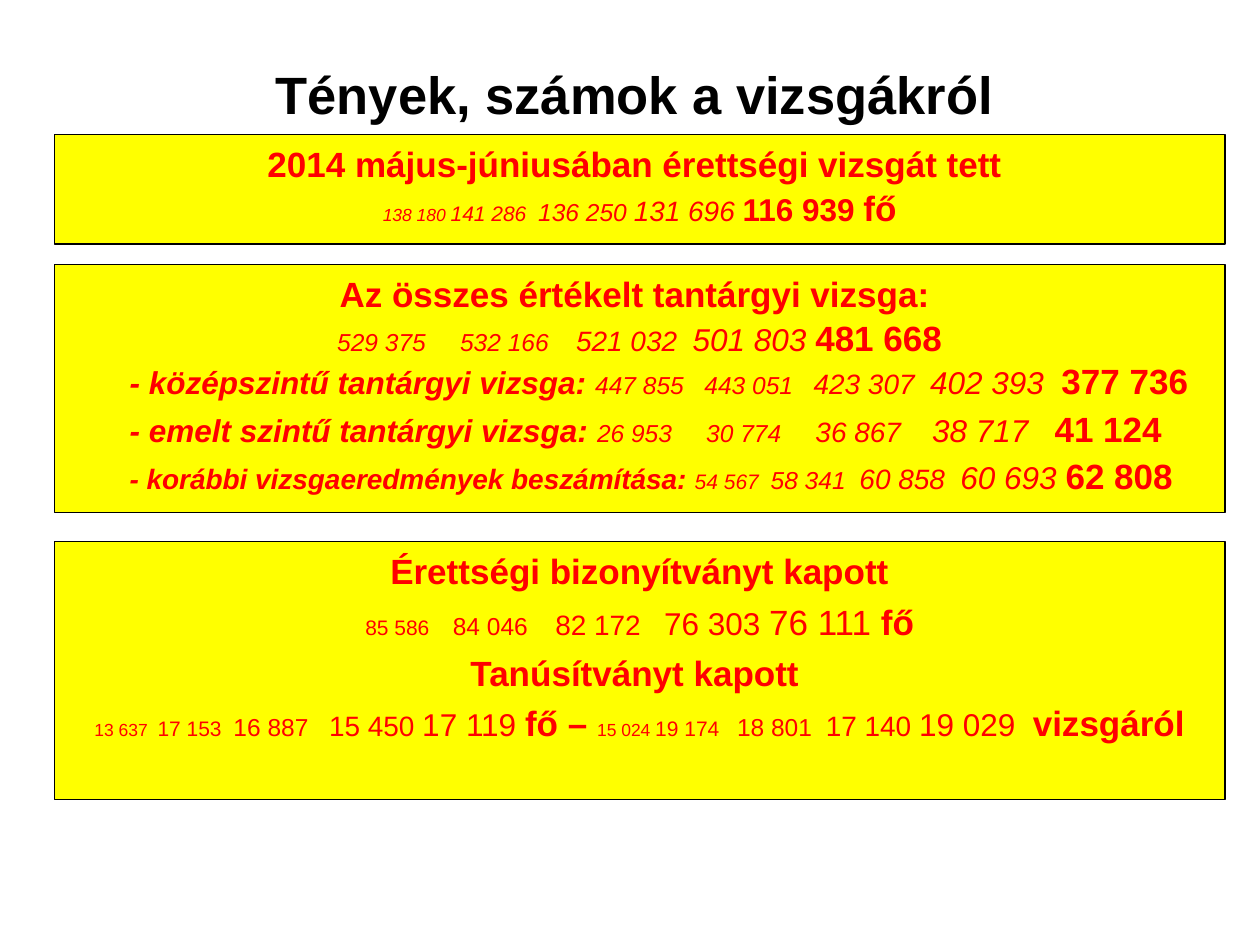
from dataclasses import dataclass

from pptx import Presentation
from pptx.dml.color import RGBColor
from pptx.enum.shapes import MSO_SHAPE
from pptx.enum.text import MSO_ANCHOR as ANCHOR, PP_ALIGN as ALIGN
from pptx.util import Pt

BLACK = RGBColor(0, 0, 0)
RED = RGBColor(0xFF, 0, 0)
YELLOW = RGBColor(0xFF, 0xFF, 0)
FONT = "Arial"
SPACE_WIDTH = 0.278
BOX_LEFT, BOX_WIDTH = 31, 669


@dataclass
class Figure:
    text: str
    size: int = 20
    bold: bool = False
    italic: bool = False
    gap: int = 1


@dataclass
class Line:
    figures: list[Figure]
    before: float = 1
    level: int = 0


@dataclass
class Box:
    top: float
    height: float
    lines: list[Line]


def heading(text: str, before: float = 0, gap: int = 1) -> Line:
    return Line([Figure(text, bold=True, gap=gap)], before)


def series(*items: tuple[str, int, int], italic: bool = False) -> list[Figure]:
    return [Figure(text, size, italic=italic, gap=gap) for text, size, gap in items]


def latest(text: str, size: int = 20, gap: int = 0) -> Figure:
    return Figure(text, size, bold=True, gap=gap)


def detail(label: str, size: int, before: float, final: str,
           *items: tuple[str, int, int]) -> Line:
    name = Figure(label, size, bold=True, italic=True)
    return Line([name, *series(*items, italic=True), latest(final)], before, 1)


def add_run(p, text: str, figure: Figure, color: RGBColor):
    r = p.add_run()
    r.text = text
    r.font.name = FONT
    r.font.size = Pt(figure.size)
    r.font.bold = figure.bold
    r.font.italic = figure.italic
    r.font.color.rgb = color
    return r


def add_figure(p, figure: Figure, color: RGBColor) -> None:
    if figure.gap <= 1:
        add_run(p, figure.text + " " * figure.gap, figure, color)
        return
    add_run(p, figure.text, figure, color)
    r = add_run(p, " ", figure, color)
    extra = round((figure.gap - 1) * SPACE_WIDTH * figure.size * 100)
    r._r.get_or_add_rPr().set("spc", str(extra))


def add_line(p, line: Line) -> None:
    p.level = line.level
    p.alignment = ALIGN.LEFT if line.level else ALIGN.CENTER
    margin, indent = (58.5, -22.5) if line.level else (27, -27)
    pPr = p._p.get_or_add_pPr()
    pPr.set("marL", str(Pt(margin)))
    pPr.set("indent", str(Pt(indent)))
    p.space_before = Pt(line.before)
    for figure in line.figures:
        add_figure(p, figure, RED)


def add_box(s, box: Box) -> None:
    sp = s.shapes.add_shape(MSO_SHAPE.RECTANGLE, Pt(BOX_LEFT), Pt(box.top),
                            Pt(BOX_WIDTH), Pt(box.height))
    sp.shadow.inherit = False
    sp.fill.solid()
    sp.fill.fore_color.rgb = YELLOW
    sp.line.color.rgb = BLACK
    sp.line.width = Pt(0.75)
    tf = sp.text_frame
    tf.word_wrap = True
    tf.vertical_anchor = ANCHOR.TOP
    tf.margin_top = Pt(4.6)
    for i, line in enumerate(box.lines):
        add_line(tf.add_paragraph() if i else tf.paragraphs[0], line)


def add_title(s, text: str) -> None:
    sp = s.shapes.title
    sp.left, sp.top, sp.width, sp.height = Pt(82), Pt(20), Pt(569.5), Pt(67)
    tf = sp.text_frame
    tf.word_wrap = True
    tf.vertical_anchor = ANCHOR.MIDDLE
    p = tf.paragraphs[0]
    p.alignment = ALIGN.CENTER
    add_figure(p, Figure(text, 30, bold=True), BLACK)


BOXES = [
    Box(77, 62.5, [
        heading("2014 május-júniusában érettségi vizsgát tett"),
        Line([
            *series(("138 180", 10, 1), ("141 286", 12, 2), ("136 250", 14, 1),
                    ("131 696", 16, 1), italic=True),
            latest("116 939", 18, 1), latest("fő"),
        ]),
    ]),
    Box(151, 142, [
        heading("Az összes értékelt tantárgyi vizsga:"),
        Line([
            *series(("529 375", 14, 5), ("532 166", 14, 4), ("521 032", 16, 2),
                    ("501 803", 18, 1), italic=True),
            latest("481 668"),
        ]),
        detail("- középszintű tantárgyi vizsga:", 18, 1, "377 736",
               ("447 855", 14, 3), ("443 051", 14, 3), ("423 307", 16, 2),
               ("402 393", 18, 2)),
        detail("- emelt szintű tantárgyi vizsga:", 18, 3, "41 124",
               ("26 953", 14, 5), ("30 774", 14, 5), ("36 867", 16, 4),
               ("38 717", 18, 3)),
        detail("- korábbi vizsgaeredmények beszámítása:", 16, 3, "62 808",
               ("54 567", 12, 2), ("58 341", 14, 2), ("60 858", 16, 2),
               ("60 693", 18, 1)),
    ]),
    Box(309.5, 147.5, [
        heading("Érettségi bizonyítványt kapott", gap=0),
        Line([
            *series(("85 586", 12, 4), ("84 046", 14, 4), ("82 172", 16, 3),
                    ("76 303", 18, 1), ("76 111", 20, 1)),
            latest("fő"),
        ], 5),
        heading("Tanúsítványt kapott", 5),
        Line([
            *series(("13 637", 10, 2), ("17 153", 12, 2), ("16 887", 14, 3),
                    ("15 450", 16, 1), ("17 119", 18, 1)),
            latest("fő –", gap=1),
            *series(("15 024", 10, 1), ("19 174", 12, 3), ("18 801", 14, 2),
                    ("17 140", 16, 1), ("19 029", 18, 2)),
            latest("vizsgáról"),
        ], 5),
    ]),
]


def main() -> None:
    prs = Presentation()
    prs.slide_width, prs.slide_height = Pt(720), Pt(540)
    s = prs.slides.add_slide(prs.slide_layouts[5])
    add_title(s, "Tények, számok a vizsgákról")
    for box in BOXES:
        add_box(s, box)
    prs.save("out.pptx")


if __name__ == "__main__":
    main()
